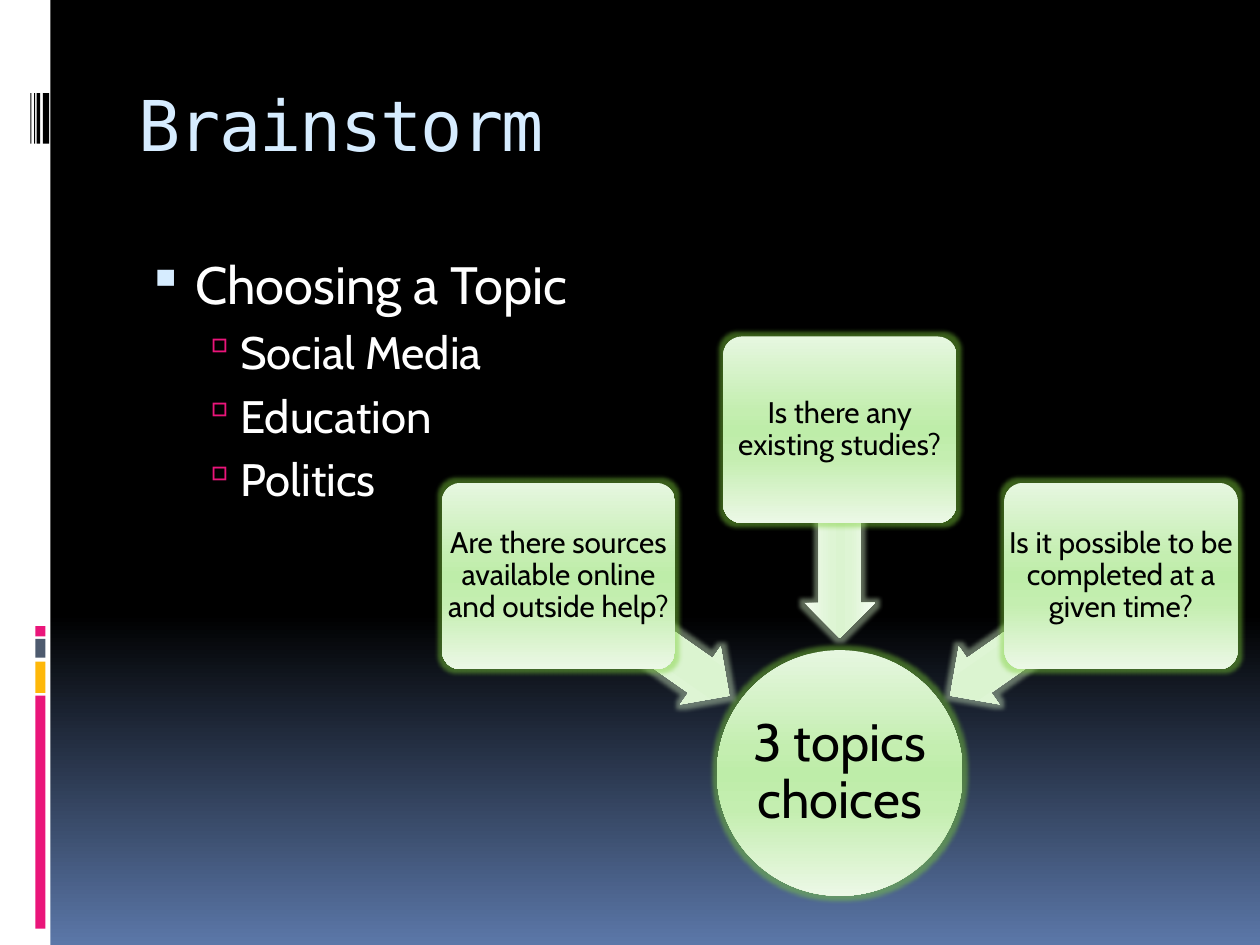
from math import cos, radians, sin

from lxml import etree
from pptx import Presentation
from pptx.dml.color import RGBColor
from pptx.enum.shapes import MSO_SHAPE
from pptx.enum.text import MSO_ANCHOR, PP_ALIGN
from pptx.oxml.ns import qn
from pptx.util import Inches, Pt

RECT, ROUND = MSO_SHAPE.RECTANGLE, MSO_SHAPE.ROUNDED_RECTANGLE
OVAL, ARROW = MSO_SHAPE.OVAL, MSO_SHAPE.LEFT_ARROW
TOP, MIDDLE = MSO_ANCHOR.TOP, MSO_ANCHOR.MIDDLE
CENTER = PP_ALIGN.CENTER

# Content
TITLE = "Brainstorm"
TOPICS = [
    (0, "Choosing a Topic"),
    (1, "Social Media"),
    (1, "Education"),
    (1, "Politics"),
]
HUB = "3 topics choices"
ASKS = [  # direction from the hub in degrees, question
    (215, "Are there sources available online and outside help?"),
    (270, "Is there any existing studies?"),
    (325, "Is it possible to be completed at a given time?"),
]

# Theme
THEME = {
    "head": "DejaVu Sans Mono", "body": "Cabin",
    "title": 40, "hub": 30, "ask": 17,
    "ice": "D6ECFF", "white": "FFFFFF", "black": "000000",
    "pink": "EA157A", "gold": "FEB80A", "slate": "4E5B6F",
    "sky": [(0, "000000"), (65, "000000"), (100, "5B77A8")],
    "leaf": [(0, "E6F7E0"), (40, "C4EEB0"), (50, "BEEDA9"),
             (65, "C4EEB0"), (100, "ECF8E6")],
    "pale": [(0, "F1FAED"), (40, "DEF5D4"), (50, "DBF4D0"),
             (65, "DEF5D4"), (100, "F4FBF1")],
    "leaf glow": "7FD13B", "pale glow": "CFEBC2",
}
LEVELS = [  # size, space before, left, hang, bullet, colour, bullet percent
    (30, 7, 0.45, 0.38, "▪", "ice", 95),
    (26, 5.2, 0.81, 0.31, "▫", "pink", 90),
]

# Side strip: left, top, width, height, colour
STRIP = [(0, 0, 0.4, 7.5, "white")]
STRIP += [(0.28, y, 0.08, h, tone) for y, h, tone in [
    (5.52, 1.85, "pink"), (5.25, 0.25, "gold"),
    (5.07, 0.15, "slate"), (4.97, 0.08, "pink")]]
STRIP += [(x, 0.74, w, 0.4, "black") for x, w in [
    (0.34, 0.05), (0.29, 0.03), (0.27, 0.01), (0.24, 0.01)]]

# Diagram geometry
MID = (6.665, 6.135)
DISC, BOX, SHAFT = (1.95, 1.95), (1.85, 1.48), (1.65, 0.56)
BOX_REACH, ARROW_REACH = 2.725, 1.895


def rgb(name):
    return RGBColor.from_string(THEME[name])


def sub(node, tag, **attrs):
    return etree.SubElement(node, qn(tag), attrs)


def blend(fill, root, name):
    """Give a fill a top-down gradient with all of its stops."""
    fill.gradient()
    fill.gradient_angle = 270
    stops = next(root.iter(qn("a:gsLst")))
    for old in list(stops):
        stops.remove(old)
    for pos, tone in THEME[name]:
        stop = sub(stops, "a:gs", pos=str(pos * 1000))
        sub(stop, "a:srgbClr", val=tone)


def add_form(slide, kind, area):
    form = slide.shapes.add_shape(kind, *map(Inches, area))
    form.shadow.inherit = False
    form.line.fill.background()
    return form


def add_glow(slide, kind, area, name, adjust=()):
    form = add_form(slide, kind, area)
    for i, val in enumerate(adjust):
        form.adjustments[i] = val
    blend(form.fill, form._element, name)
    effects = form._element.spPr.find(qn("a:effectLst"))
    glow = sub(effects, "a:glow", rad=str(Pt(5)))
    tone = sub(glow, "a:srgbClr", val=THEME[name + " glow"])
    sub(tone, "a:alpha", val="45000")
    return form


def add_frame(slide, area, pad, anchor):
    """Text box with side and top padding."""
    frame = slide.shapes.add_textbox(*map(Inches, area)).text_frame
    frame.word_wrap = True
    frame.vertical_anchor = anchor
    frame.margin_left = frame.margin_right = Inches(pad[0])
    frame.margin_top = frame.margin_bottom = Inches(pad[1])
    return frame


def add_run(para, text, size, tone, font="body"):
    run = para.add_run()
    run.text = text
    run.font.size = Pt(size)
    run.font.name = THEME[font]
    run.font.color.rgb = rgb(tone)
    return run


def add_label(slide, area, text, size):
    para = add_frame(slide, area, (0.03, 0.03), MIDDLE).paragraphs[0]
    para.alignment = CENTER
    para.line_spacing = 0.9
    add_run(para, text, size, "black")


def add_list(slide):
    frame = add_frame(slide, (1, 1.95, 8.5, 5), (0.1, 0.05), TOP)
    for i, (level, text) in enumerate(TOPICS):
        size, gap, left, hang, mark, tone, scale = LEVELS[level]
        para = frame.add_paragraph() if i else frame.paragraphs[0]
        para.level = level
        para.space_before = Pt(gap)
        props = para._p.get_or_add_pPr()
        props.set("marL", str(Inches(left)))
        props.set("indent", str(-Inches(hang)))
        sub(sub(props, "a:buClr"), "a:srgbClr", val=THEME[tone])
        sub(props, "a:buSzPct", val=str(scale * 1000))
        sub(props, "a:buChar", char=mark)
        add_run(para, text, size, "white")


def around(size, angle=0, reach=0):
    """Area of a part centred at a polar offset from the hub."""
    x = MID[0] + reach * cos(radians(angle))
    y = MID[1] + reach * sin(radians(angle))
    return (x - size[0] / 2, y - size[1] / 2, *size)


def add_diagram(slide):
    add_glow(slide, OVAL, around(DISC), "leaf")
    add_label(slide, around(DISC), HUB, THEME["hub"])
    for angle, text in ASKS:
        spot = around(SHAFT, angle, ARROW_REACH)
        add_glow(slide, ARROW, spot, "pale", (0.6, 0.5)).rotation = angle
        area = around(BOX, angle, BOX_REACH)
        add_glow(slide, ROUND, area, "leaf", (0.1,))
        add_label(slide, area, text, THEME["ask"])


def main():
    deck = Presentation()
    deck.slide_width, deck.slide_height = Inches(10), Inches(7.5)
    slide = deck.slides.add_slide(deck.slide_layouts[6])
    blend(slide.background.fill, slide._element, "sky")

    # Side strip
    for *area, tone in STRIP:
        form = add_form(slide, RECT, area)
        form.fill.solid()
        form.fill.fore_color.rgb = rgb(tone)

    # Title
    frame = add_frame(slide, (1, 0.56, 8.5, 1), (0.1, 0.09), TOP)
    run = add_run(frame.paragraphs[0], TITLE, THEME["title"], "ice", "head")
    run._r.get_or_add_rPr().set("spc", "-100")

    add_list(slide)
    add_diagram(slide)
    deck.save("out.pptx")


if __name__ == "__main__":
    main()
